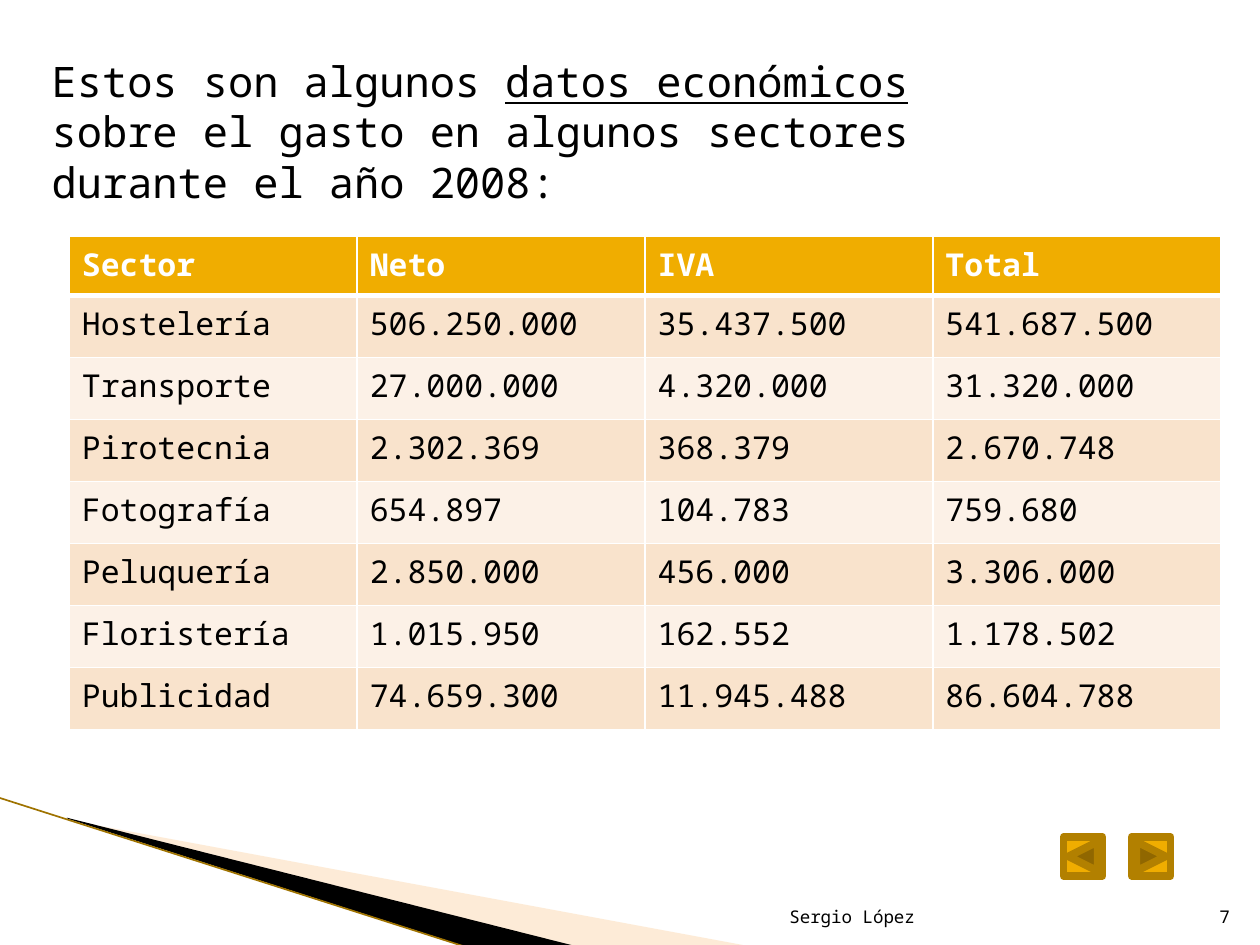
from dataclasses import dataclass

import pptx
import pptx.dml.color
import pptx.enum.shapes
import pptx.enum.text
import pptx.oxml
import pptx.oxml.ns
import pptx.util
from lxml import etree

Pt = pptx.util.Pt
RGBColor = pptx.dml.color.RGBColor
Shapes = pptx.enum.shapes.MSO_SHAPE
Align = pptx.enum.text.PP_ALIGN
Anchor = pptx.enum.text.MSO_ANCHOR
qn = pptx.oxml.ns.qn

FONT = "Noto Sans Mono"
BLACK = RGBColor(0x00, 0x00, 0x00)
WHITE = RGBColor(0xFF, 0xFF, 0xFF)
GOLD = RGBColor(0xF0, 0xAD, 0x00)
DARK_GOLD = RGBColor(0xB2, 0x80, 0x00)
EDGE_GOLD = RGBColor(0x9F, 0x73, 0x00)
PEACH = RGBColor(0xFC, 0xCF, 0x9B)
BAND_DARK = RGBColor(0xF9, 0xE3, 0xCC)
BAND_LIGHT = RGBColor(0xFC, 0xF1, 0xE7)

ROWS = [
    ("Sector", "Neto", "IVA", "Total"),
    ("Hostelería", "506.250.000", "35.437.500", "541.687.500"),
    ("Transporte", "27.000.000", "4.320.000", "31.320.000"),
    ("Pirotecnia", "2.302.369", "368.379", "2.670.748"),
    ("Fotografía", "654.897", "104.783", "759.680"),
    ("Peluquería", "2.850.000", "456.000", "3.306.000"),
    ("Floristería", "1.015.950", "162.552", "1.178.502"),
    ("Publicidad", "74.659.300", "11.945.488", "86.604.788"),
]


@dataclass
class Wedge:
    points: list[tuple[float, float]]
    color: RGBColor
    opacity: int = 100


@dataclass
class FooterText:
    text: str
    left: float
    width: float


@dataclass
class NavigationButton:
    preset: Shapes
    left: float


WEDGES = [
    Wedge([(39.6, 468.7), (428.4, 540.7), (328.3, 540.7), (39.6, 468)], PEACH, 40),
    Wedge([(38.2, 467.3), (329, 540.7), (267.8, 541.4), (38.9, 468)], BLACK),
]
FOOTERS = [FooterText("Sergio López", 344.9, 185), FooterText("7", 681.1, 28.8)]
BUTTONS = [
    NavigationButton(Shapes.ACTION_BUTTON_FORWARD_OR_NEXT, 646.6),
    NavigationButton(Shapes.ACTION_BUTTON_BACK_OR_PREVIOUS, 607.7),
]


def add_span(para, text: str, *, size: float, color: RGBColor = BLACK,
             bold: bool = False, underline: bool = False) -> None:
    span = para.add_run()
    span.text = text
    span.font.name = FONT
    span.font.size = Pt(size)
    span.font.bold = bold
    span.font.underline = underline
    span.font.color.rgb = color


def draw_wedge(page, wedge: Wedge) -> None:
    points = [(Pt(x), Pt(y)) for x, y in wedge.points]
    builder = page.shapes.build_freeform(*points[0])
    builder.add_line_segments(points[1:], close=True)
    shape = builder.convert_to_shape()
    shape.shadow.inherit = False
    shape.fill.solid()
    shape.fill.fore_color.rgb = wedge.color
    shape.line.fill.background()
    if wedge.opacity < 100:
        color = shape.fill._xPr.find(qn("a:solidFill"))[0]
        etree.SubElement(color, qn("a:alpha"), val=str(wedge.opacity * 1000))


def draw_edge(page) -> None:
    edge = page.shapes.add_connector(
        pptx.enum.shapes.MSO_CONNECTOR.STRAIGHT,
        Pt(-0.7), Pt(455.8), Pt(267.1), Pt(541.4))
    edge.line.color.rgb = EDGE_GOLD
    edge.line.width = Pt(0.95)
    etree.SubElement(edge._element.spPr, qn("a:effectLst"))


def draw_heading(page) -> None:
    box = page.shapes.title
    box.left, box.top, box.width, box.height = Pt(22.3), Pt(28), Pt(579.6), Pt(94)
    frame = box.text_frame
    frame.word_wrap = True
    frame.auto_size = pptx.enum.text.MSO_AUTO_SIZE.SHAPE_TO_FIT_TEXT
    frame.vertical_anchor = Anchor.TOP
    para = frame.paragraphs[0]
    para.alignment = Align.LEFT
    add_span(para, "Estos son algunos ", size=24)
    add_span(para, "datos económicos ", size=24, underline=True)
    add_span(para, "sobre el gasto en algunos sectores durante el año 2008:", size=24)


def set_borders(cell, bottom: float, top: float) -> None:
    properties = cell._tc.get_or_add_tcPr()
    widths = {"lnL": 1, "lnR": 1, "lnT": top, "lnB": bottom}
    for index, (side, width) in enumerate(widths.items()):
        border = pptx.oxml.parse_xml(
            f'<a:{side} {pptx.oxml.ns.nsdecls("a")} w="{Pt(width)}">'
            f'<a:solidFill><a:srgbClr val="{WHITE}"/></a:solidFill></a:{side}>')
        properties.insert(index, border)


def draw_table(page) -> None:
    table = page.shapes.add_table(
        len(ROWS), len(ROWS[0]), Pt(39.6), Pt(135), Pt(658), Pt(282)).table
    for column in table.columns:
        column.width = Pt(164.5)
    for index, texts in enumerate(ROWS):
        header = index == 0
        table.rows[index].height = Pt(34 if header else 35.43)
        fill = GOLD if header else BAND_DARK if index % 2 else BAND_LIGHT
        for cell, text in zip(table.rows[index].cells, texts):
            cell.fill.solid()
            cell.fill.fore_color.rgb = fill
            set_borders(cell, bottom=3 if header else 1, top=3 if index == 1 else 1)
            add_span(cell.text_frame.paragraphs[0], text, size=18,
                     color=WHITE if header else BLACK, bold=header)


def draw_footer(page, footer: FooterText) -> None:
    box = page.shapes.add_textbox(Pt(footer.left), Pt(504.7), Pt(footer.width), Pt(28.8))
    frame = box.text_frame
    frame.word_wrap = True
    frame.vertical_anchor = Anchor.BOTTOM
    para = frame.paragraphs[0]
    para.alignment = Align.RIGHT
    add_span(para, footer.text, size=10)


def draw_button(page, button: NavigationButton) -> None:
    shape = page.shapes.add_shape(
        button.preset, Pt(button.left), Pt(478.2), Pt(22.3), Pt(22.3))
    shape.shadow.inherit = False
    shape.fill.solid()
    shape.fill.fore_color.rgb = GOLD
    shape.line.color.rgb = DARK_GOLD
    shape.line.width = Pt(4.33)
    etree.SubElement(shape.line._get_or_add_ln(), qn("a:round"))


def main() -> None:
    deck = pptx.Presentation()
    deck.slide_width, deck.slide_height = Pt(720), Pt(540)
    page = deck.slides.add_slide(deck.slide_layouts[5])

    # Corner decoration
    for wedge in WEDGES:
        draw_wedge(page, wedge)
    draw_edge(page)

    # Heading and figures
    draw_heading(page)
    draw_table(page)

    # Footer and navigation
    for footer in FOOTERS:
        draw_footer(page, footer)
    for button in BUTTONS:
        draw_button(page, button)

    deck.save("out.pptx")


if __name__ == "__main__":
    main()
